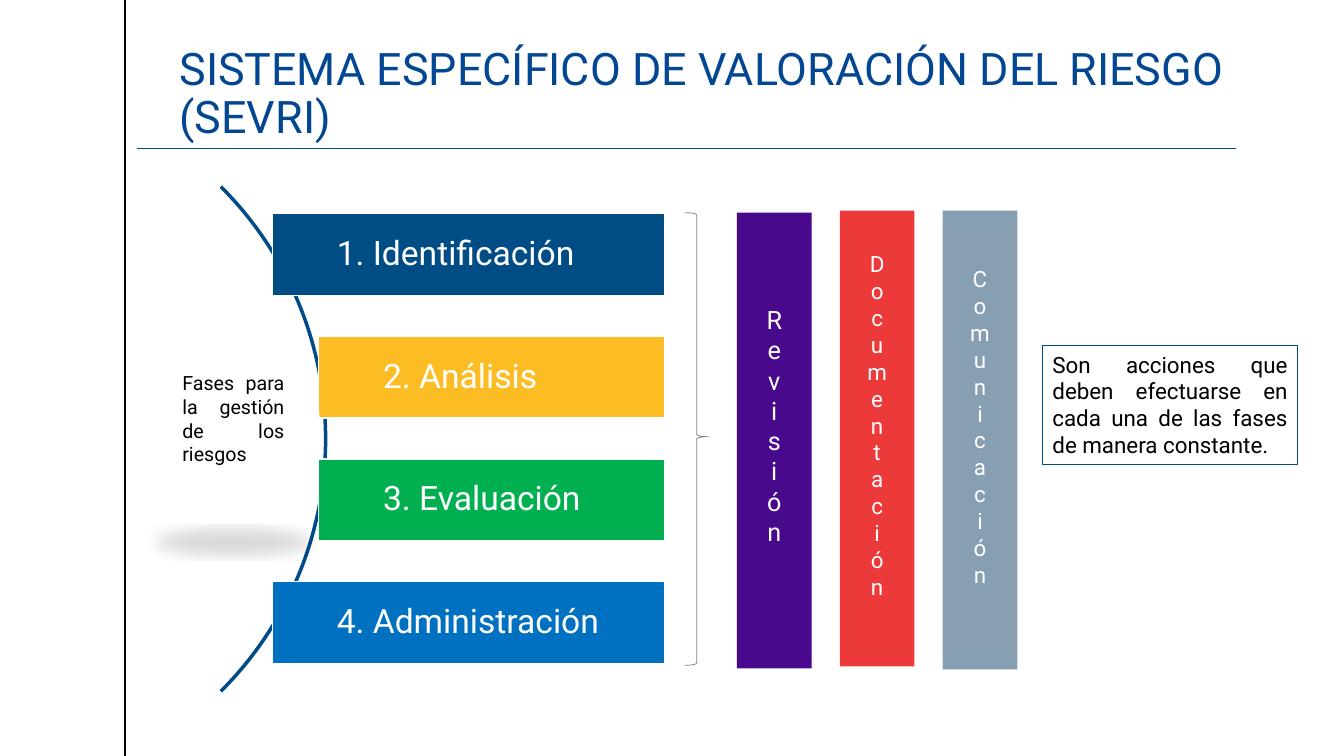
from lxml import etree
from pptx import Presentation
from pptx import util as u
from pptx.dml import color
from pptx.enum import shapes, text
from pptx.oxml import ns

NAVY = "004D86"
WHITE = "FFFFFF"
BLACK = "000000"


def paint(target, hex_color):
    target.rgb = color.RGBColor.from_string(hex_color)


def apply_format(target, values):
    for name, value in values.items():
        setattr(target, name, value)


def inches(box):
    return [u.Inches(value) for value in box]


def add_rule(slide, start, end, hex_color, width):
    rule = slide.shapes.add_connector(
        shapes.MSO_CONNECTOR.STRAIGHT, *inches(start + end))
    paint(rule.line.color, hex_color)
    rule.line.width = u.Pt(width)
    etree.SubElement(rule._element.spPr, ns.qn("a:effectLst"))


def add_figure(slide, kind, box, fill=None, line=None, width=1, adjustments=()):
    figure = slide.shapes.add_shape(kind, *inches(box))
    figure.shadow.inherit = False
    for index, value in enumerate(adjustments):
        figure.adjustments[index] = value
    if fill:
        figure.fill.solid()
        paint(figure.fill.fore_color, fill)
    else:
        figure.fill.background()
    if line:
        paint(figure.line.color, line)
        figure.line.width = u.Pt(width)
    else:
        figure.line.fill.background()
    return figure


def write(figure, words, size, hex_color, align, frame_format, spacing=None):
    frame = figure.text_frame
    apply_format(frame, {"word_wrap": True, **frame_format})
    paragraph = frame.paragraphs[0]
    apply_format(paragraph, {"alignment": align, "line_spacing": spacing})
    run = paragraph.add_run()
    run.text = words
    apply_format(run.font, {"name": "Roboto", "size": u.Pt(size)})
    paint(run.font.color, hex_color)


def add_title(slide, words):
    title = slide.shapes.add_textbox(*inches((1.78, 0.37, 11.08, 1.1)))
    write(title, words, 32, "034793", text.PP_ALIGN.LEFT,
          {"margin_left": 0, "margin_right": 0,
           "vertical_anchor": text.MSO_ANCHOR.BOTTOM}, 0.9)


def add_phase(slide, words, left, top, fill):
    phase = add_figure(slide, shapes.MSO_SHAPE.RECTANGLE,
                       (left, top, 6.59 - left, 0.81), fill, WHITE)
    write(phase, words, 24, WHITE, text.PP_ALIGN.LEFT,
          {"margin_left": u.Inches(0.64), "margin_right": u.Inches(0.07),
           "vertical_anchor": text.MSO_ANCHOR.MIDDLE}, 0.9)


def add_action(slide, words, size, box, fill):
    action = add_figure(slide, shapes.MSO_SHAPE.RECTANGLE, box, fill)
    write(action, words, size, WHITE, text.PP_ALIGN.CENTER,
          {"vertical_anchor": text.MSO_ANCHOR.MIDDLE})
    action.text_frame._txBody.bodyPr.set("vert", "wordArtVert")


def add_note(slide, kind, words, size, box, **look):
    note = add_figure(slide, kind, box, **look)
    write(note, words, size, BLACK, text.PP_ALIGN.JUSTIFY,
          {"vertical_anchor": text.MSO_ANCHOR.TOP,
           "auto_size": text.MSO_AUTO_SIZE.SHAPE_TO_FIT_TEXT})
    return note


def cast_shadow_below(figure):
    effects = figure._element.spPr.find(ns.qn("a:effectLst"))
    shadow = etree.SubElement(
        effects, ns.qn("a:outerShdw"), blurRad=str(u.Pt(12)),
        dist=str(u.Pt(25)), dir="5400000", sx="90000", sy="-19000",
        rotWithShape="0")
    tint = etree.SubElement(shadow, ns.qn("a:srgbClr"), val=BLACK)
    etree.SubElement(tint, ns.qn("a:alpha"), val="15000")


def main():
    deck = Presentation()
    apply_format(deck, {"slide_width": u.Inches(13.33),
                        "slide_height": u.Inches(7.5)})
    slide = deck.slides.add_slide(deck.slide_layouts[6])

    add_rule(slide, (1.24, 0), (1.24, 7.5), BLACK, 1)
    add_title(slide, "SISTEMA ESPECÍFICO DE VALORACIÓN DEL RIESGO (SEVRI)")
    add_figure(slide, shapes.MSO_SHAPE.BLOCK_ARC, (-3.85, 0.81, 7.09, 7.09),
               "034793", NAVY, adjustments=(189, 27, 0.003))

    phases = [("1. Identificación", 2.7, NAVY),
              ("2. Análisis", 3.16, "FCBD24"),
              ("3. Evaluación", 3.16, "00B050"),
              ("4. Administración", 2.7, "0070C0")]
    for row, (words, left, fill) in enumerate(phases):
        add_phase(slide, words, left, 2.12 + 1.217 * row, fill)

    add_rule(slide, (1.36, 1.47), (12.26, 1.47), NAVY, 0.5)
    phases_note = add_note(
        slide, shapes.MSO_SHAPE.OVAL, "Fases para la gestión de los riesgos",
        14, (1.46, 3.42, 1.71, 1.47), fill=WHITE)
    cast_shadow_below(phases_note)

    actions = [("Revisión ", 18, 2.11, 4.52, "48098D"),
               ("Documentación ", 16, 2.09, 4.52, "EC3A3B"),
               ("Comunicación ", 16, 2.09, 4.55, "869FB2")]
    for column, (words, size, top, height, fill) in enumerate(actions):
        add_action(slide, words, size,
                   (7.31 + 1.02 * column, top, 0.74, height), fill)

    add_figure(slide, shapes.MSO_SHAPE.RIGHT_BRACE, (6.79, 2.11, 0.24, 4.49),
               line="808080", width=0.5, adjustments=(0.083, 0.495))
    add_note(slide, shapes.MSO_SHAPE.RECTANGLE,
             "Son acciones que deben efectuarse en cada una de las fases "
             "de manera constante.",
             16, (10.34, 3.43, 2.53, 1.18), line=NAVY, width=0.75)

    deck.save("out.pptx")


if __name__ == "__main__":
    main()
